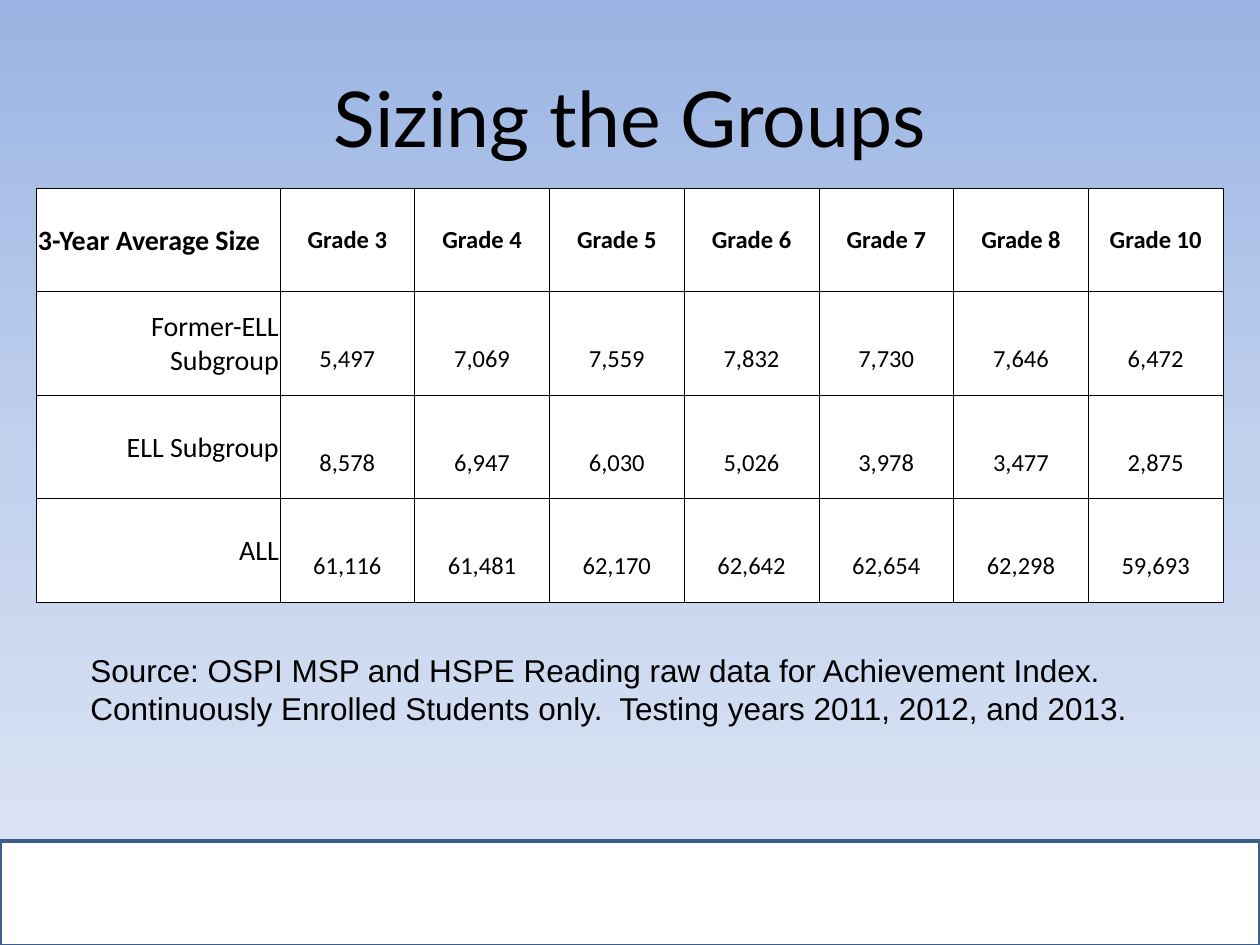
from copy import deepcopy

from lxml import etree
from pptx import Presentation
from pptx import util as u
from pptx.dml.color import RGBColor
from pptx.enum import shapes, text
from pptx.oxml.ns import qn

BLACK = RGBColor(0x00, 0x00, 0x00)
WHITE = RGBColor(0xFF, 0xFF, 0xFF)
BAND_LINE = RGBColor(0x3A, 0x5F, 0x8C)
SKY = [(0, RGBColor(0x9A, 0xB5, 0xE4)),
       (0.5, RGBColor(0xC2, 0xD1, 0xED)),
       (1, RGBColor(0xE1, 0xE8, 0xF5))]

LEFT, CENTER, RIGHT = text.PP_ALIGN.LEFT, text.PP_ALIGN.CENTER, text.PP_ALIGN.RIGHT

HEADER = ["3-Year Average Size"] + [f"Grade {g}" for g in (3, 4, 5, 6, 7, 8, 10)]
GROUPS = {
    "Former-ELL Subgroup": [5497, 7069, 7559, 7832, 7730, 7646, 6472],
    "ELL Subgroup": [8578, 6947, 6030, 5026, 3978, 3477, 2875],
    "ALL": [61116, 61481, 62170, 62642, 62654, 62298, 59693],
}
SOURCE = ("Source: OSPI MSP and HSPE Reading raw data for Achievement Index.  "
          "Continuously Enrolled Students only.  Testing years 2011, 2012, and 2013.")


class SlideBuilder:
    """Holds the current slide and the style shared by its elements."""

    title_style = dict(name="Lato", size=u.Pt(44), bold=False)
    label_style = dict(name="Calibri", size=u.Pt(16))
    value_style = dict(name="Calibri", size=u.Pt(14))
    note_style = dict(name="Arial", size=u.Pt(18))
    cell_format = dict(margin_left=u.Pt(0.7), margin_right=u.Pt(0.7),
                       margin_top=u.Pt(0.7), margin_bottom=0,
                       vertical_anchor=text.MSO_ANCHOR.MIDDLE)
    value_drop = u.Pt(18)  # values sit one line below the row's middle

    def __init__(self, prs):
        self.s = prs.slides.add_slide(prs.slide_layouts[5])

    @staticmethod
    def box(*lengths):
        return [u.Pt(n) for n in lengths]

    @staticmethod
    def add_words(tf, words, style, align=LEFT, **extra):
        p = tf.paragraphs[0]
        p.alignment = align
        r = p.add_run()
        r.text = words
        for name, value in {**style, **extra}.items():
            setattr(r.font, name, value)
        r.font.color.rgb = BLACK

    def background(self, stops):
        fill = self.s.background.fill
        fill.gradient()
        fill.gradient_angle = 270
        gs_list = self.s.element.find(".//" + qn("a:gsLst"))
        gs_list.append(deepcopy(gs_list[0]))
        for stop, (position, color) in zip(fill.gradient_stops, stops):
            stop.position = position
            stop.color.rgb = color

    def band(self, *lengths):
        sp = self.s.shapes.add_shape(shapes.MSO_SHAPE.RECTANGLE, *self.box(*lengths))
        sp.shadow.inherit = False
        sp.fill.solid()
        sp.fill.fore_color.rgb = WHITE
        sp.line.color.rgb = BAND_LINE
        sp.line.width = u.Pt(2)

    def title(self, words, *lengths):
        sp = self.s.shapes.title
        sp.left, sp.top, sp.width, sp.height = self.box(*lengths)
        sp.text_frame.vertical_anchor = text.MSO_ANCHOR.MIDDLE
        self.add_words(sp.text_frame, words, self.title_style, CENTER)

    def note(self, words, *lengths):
        tf = self.s.shapes.add_textbox(*self.box(*lengths)).text_frame
        tf.word_wrap = True
        tf.auto_size = text.MSO_AUTO_SIZE.SHAPE_TO_FIT_TEXT
        self.add_words(tf, words, self.note_style)

    def cell(self, cell, words, style, align, bold=False, **extra):
        for name, value in {**self.cell_format, **extra}.items():
            setattr(cell, name, value)
        self.add_words(cell.text_frame, words, style, align, bold=bold)
        # Thin black border on all four sides
        tc_pr = cell._tc.get_or_add_tcPr()
        for side in "LRTB":
            ln = etree.SubElement(tc_pr, qn(f"a:ln{side}"), w=str(u.Pt(0.5)))
            solid = etree.SubElement(ln, qn("a:solidFill"))
            etree.SubElement(solid, qn("a:srgbClr"), val=str(BLACK))
        cell.fill.solid()
        cell.fill.fore_color.rgb = WHITE

    def table(self, header, groups, left, top, label_width, value_width, row_height):
        rows, cols = len(groups) + 1, len(header)
        width = label_width + value_width * (cols - 1)
        table = self.s.shapes.add_table(
            rows, cols, *self.box(left, top, width, row_height * rows)).table
        table.first_row = table.horz_banding = False
        for i, column in enumerate(table.columns):
            column.width = u.Pt(value_width if i else label_width)
        for row in table.rows:
            row.height = u.Pt(row_height)

        for i, words in enumerate(header):
            style, align = (self.value_style, CENTER) if i else (self.label_style, LEFT)
            self.cell(table.cell(0, i), words, style, align, bold=True)
        for i, (label, values) in enumerate(groups.items(), 1):
            self.cell(table.cell(i, 0), label, self.label_style, RIGHT)
            for j, value in enumerate(values, 1):
                self.cell(table.cell(i, j), f"{value:,}", self.value_style, CENTER,
                          margin_top=self.value_drop)


def main():
    prs = Presentation()
    prs.slide_width, prs.slide_height = u.Pt(720), u.Pt(540)
    slide = SlideBuilder(prs)

    # Backdrop
    slide.background(SKY)
    slide.band(0, 480.5, 720, 60)

    # Content
    slide.title("Sizing the Groups", 36, 21.6, 648, 90)
    slide.table(HEADER, GROUPS, left=21, top=107.5,
                label_width=139, value_width=77, row_height=59.2)
    slide.note(SOURCE, 44.6, 368.5, 637, 51)

    prs.save("out.pptx")


if __name__ == "__main__":
    main()
